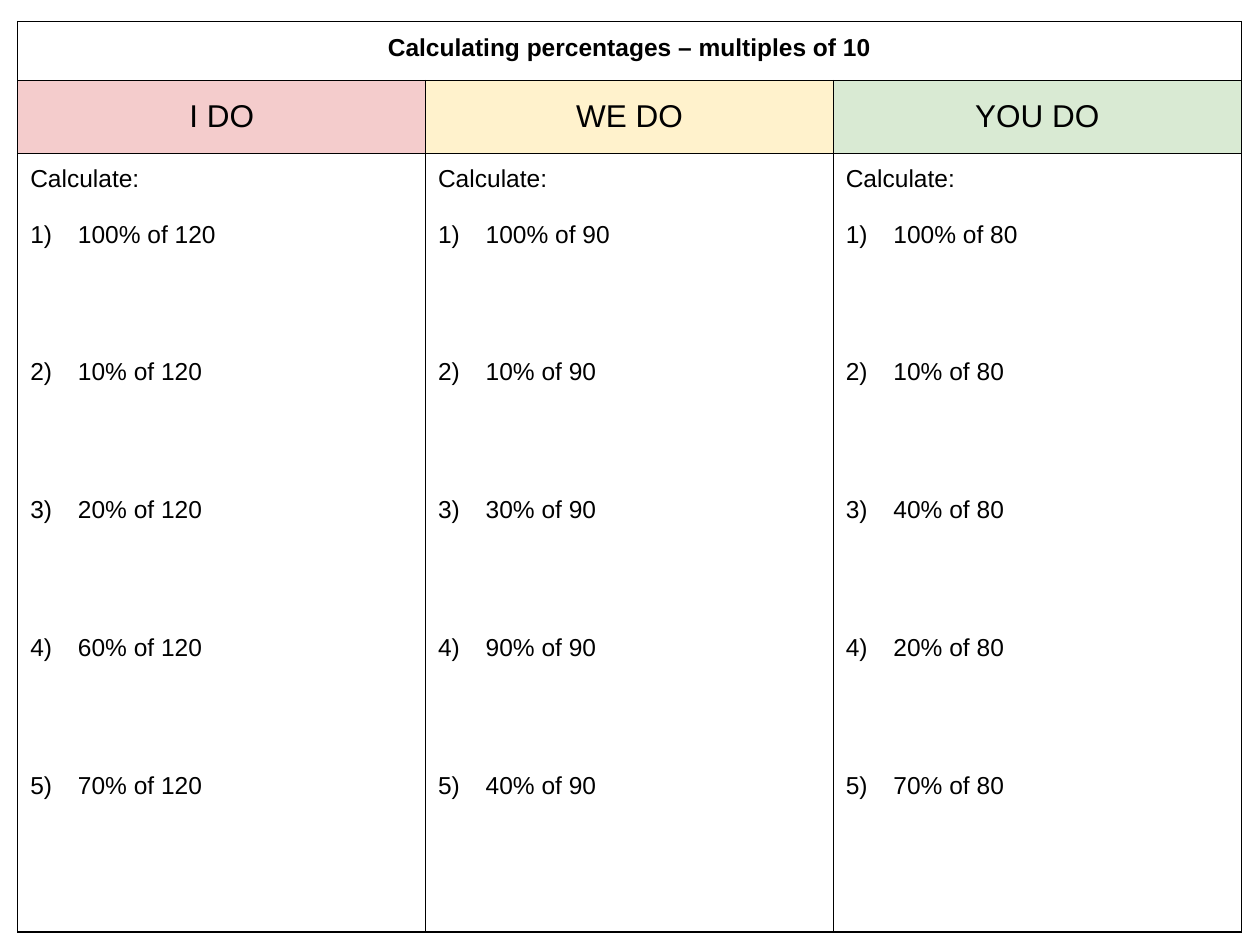
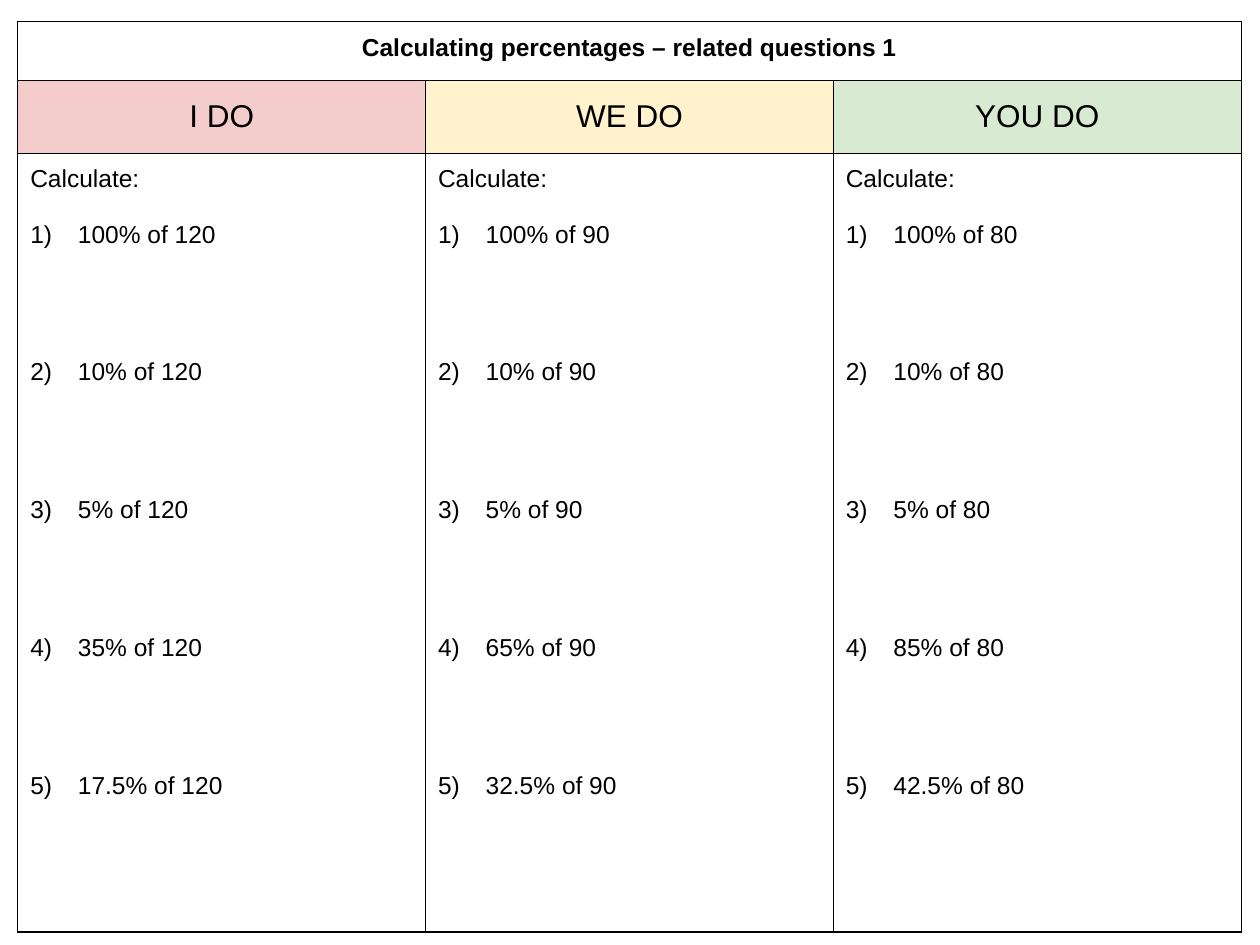
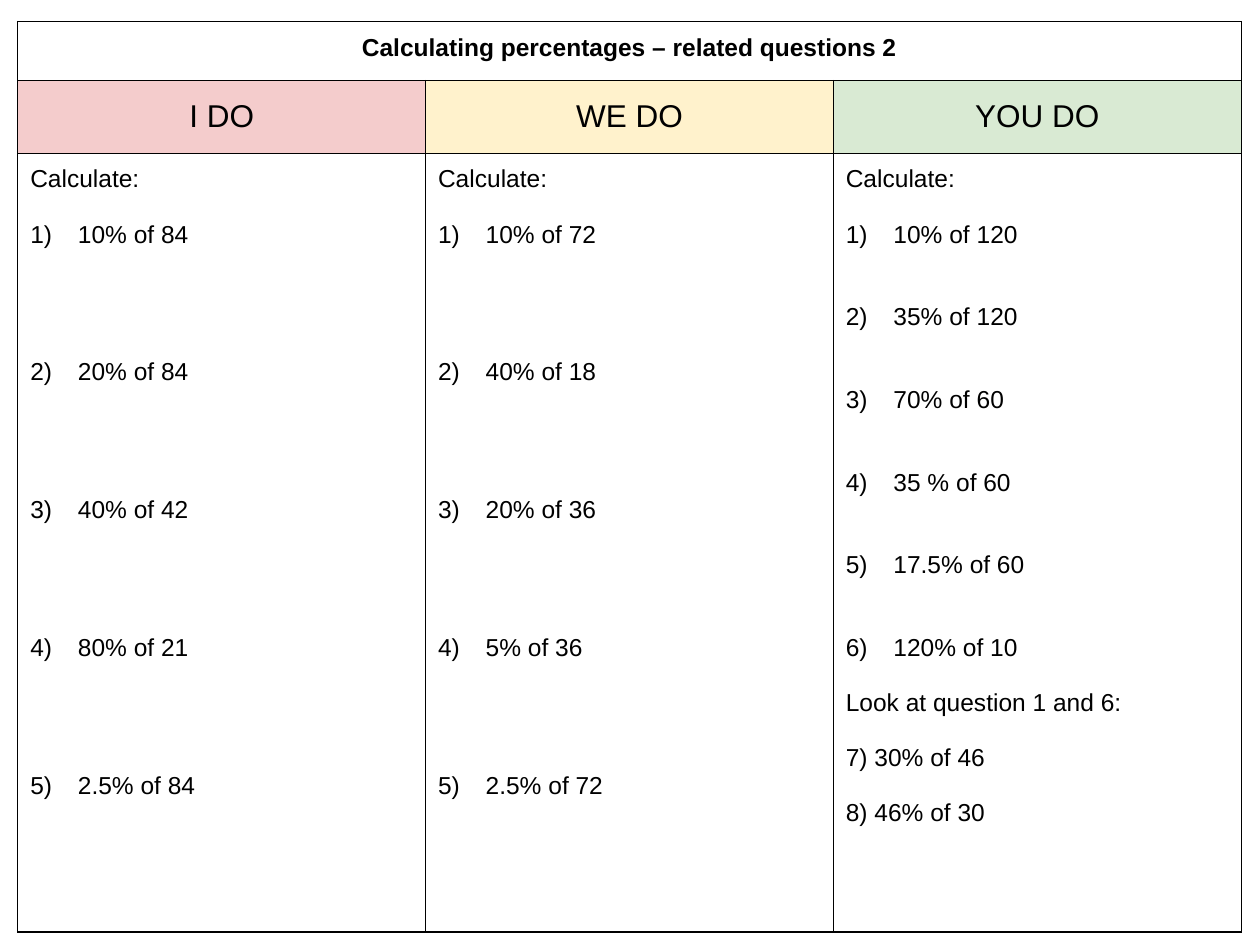
from dataclasses import dataclass

from lxml.etree import SubElement
from pptx import Presentation
from pptx.dml.color import RGBColor as Rgb
from pptx.enum.text import MSO_ANCHOR as Anchor, PP_ALIGN as Align
from pptx.oxml.ns import qn
from pptx.util import Cm, Pt


@dataclass(frozen=True)
class Theme:
    font: str = "Arial"
    ink: str = "000000"
    phase_fills: tuple = ("F4CCCC", "FFF2CC", "D9EAD3")
    body_size: int = 14
    phase_size: int = 18
    line_height: float = 15.75
    border: float = 0.75
    inset: float = 0.25
    hanging: float = 0.96


THEME = Theme()
PHASES = ("I DO", "WE DO", "YOU DO")
BOARD_BOX = (0.36, 0.43, 24.66, 18.36)
TITLE_HEIGHT, PHASE_HEIGHT = 1.19, 1.47


@dataclass(frozen=True)
class Exercise:
    questions: tuple
    working_lines: int = 4
    follow_up: tuple = ()


def percentages_of(number, *rates):
    return Exercise(tuple(f"{rate}% of {number}" for rate in rates))


LESSONS = (
    ("Calculating percentages – multiples of 10", (
        percentages_of(120, 100, 10, 20, 60, 70),
        percentages_of(90, 100, 10, 30, 90, 40),
        percentages_of(80, 100, 10, 40, 20, 70),
    )),
    ("Calculating percentages – related questions 1", (
        percentages_of(120, 100, 10, 5, 35, 17.5),
        percentages_of(90, 100, 10, 5, 65, 32.5),
        percentages_of(80, 100, 10, 5, 85, 42.5),
    )),
    ("Calculating percentages – related questions 2", (
        Exercise(("10% of 84", "20% of 84", "40% of 42", "80% of 21", "2.5% of 84")),
        Exercise(("10% of 72", "40% of 18", "20% of 36", "5% of 36", "2.5% of 72")),
        Exercise(
            ("10% of 120", "35% of 120", "70% of 60", "35 % of 60", "17.5% of 60", "120% of 10"),
            working_lines=2,
            follow_up=("Look at question 1 and 6:", "7) 30% of 46", "8) 46% of 30"),
        ),
    )),
)


def style_cell(cell, fill=None):
    cell.margin_left = cell.margin_right = Cm(THEME.inset)
    cell.margin_top = cell.margin_bottom = Cm(THEME.inset)
    properties = cell._tc.get_or_add_tcPr()
    for side in ("lnL", "lnR", "lnT", "lnB"):
        line = SubElement(properties, qn(f"a:{side}"), w=str(Pt(THEME.border)))
        SubElement(SubElement(line, qn("a:solidFill")), qn("a:srgbClr"), val=THEME.ink)
    if fill:
        cell.fill.solid()
        cell.fill.fore_color.rgb = Rgb.from_string(fill)
    else:
        cell.fill.background()


def write(paragraph, text, size=THEME.body_size, bold=False, align=Align.LEFT, lines_before=0):
    paragraph.text = text
    paragraph.alignment = align
    paragraph.space_before = Pt(lines_before * THEME.line_height)
    for run in paragraph.runs:
        run.font.name, run.font.size, run.font.bold = THEME.font, Pt(size), bold
        run.font.color.rgb = Rgb.from_string(THEME.ink)


def number(paragraph):
    """Give the paragraph a hanging automatic number: 1), 2), ..."""
    properties = paragraph._p.get_or_add_pPr()
    properties.set("marL", str(Cm(THEME.hanging)))
    properties.set("indent", str(-Cm(THEME.hanging)))
    SubElement(SubElement(properties, qn("a:buClr")), qn("a:srgbClr"), val=THEME.ink)
    SubElement(properties, qn("a:buFont"), typeface=THEME.font)
    SubElement(properties, qn("a:buAutoNum"), type="arabicParenR")


def fill_exercise(cell, exercise):
    style_cell(cell)
    frame = cell.text_frame
    write(frame.paragraphs[0], "Calculate:")
    for position, question in enumerate(exercise.questions):
        paragraph = frame.add_paragraph()
        write(paragraph, question, lines_before=exercise.working_lines if position else 1)
        number(paragraph)
    for remark in exercise.follow_up:
        write(frame.add_paragraph(), remark, lines_before=1)


def fill_phase(cell, phase, fill):
    style_cell(cell, fill)
    cell.vertical_anchor = Anchor.MIDDLE
    write(cell.text_frame.paragraphs[0], phase, THEME.phase_size, align=Align.CENTER)


def fill_title(board, title):
    for cell in board.rows[0].cells:
        style_cell(cell)
    banner = board.cell(0, 0)
    banner.merge(board.cell(0, len(PHASES) - 1))
    write(banner.text_frame.paragraphs[0], title, bold=True, align=Align.CENTER)


def add_board(slide, box, title, exercises):
    left, top, width, height = box
    board = slide.shapes.add_table(
        3, len(PHASES), Cm(left), Cm(top), Cm(width), Cm(height)).table
    board.first_row = board.horz_banding = False
    for column in board.columns:
        column.width = Cm(width / len(PHASES))
    row_heights = (TITLE_HEIGHT, PHASE_HEIGHT, height - TITLE_HEIGHT - PHASE_HEIGHT)
    for row, row_height in zip(board.rows, row_heights):
        row.height = Cm(row_height)

    fill_title(board, title)
    for index, (phase, fill, exercise) in enumerate(zip(PHASES, THEME.phase_fills, exercises)):
        fill_phase(board.cell(1, index), phase, fill)
        fill_exercise(board.cell(2, index), exercise)


def main():
    deck = Presentation()
    deck.slide_width, deck.slide_height = Cm(25.4), Cm(19.05)
    for title, exercises in LESSONS:
        add_board(deck.slides.add_slide(deck.slide_layouts[6]), BOARD_BOX, title, exercises)
    deck.save("out.pptx")


if __name__ == "__main__":
    main()
